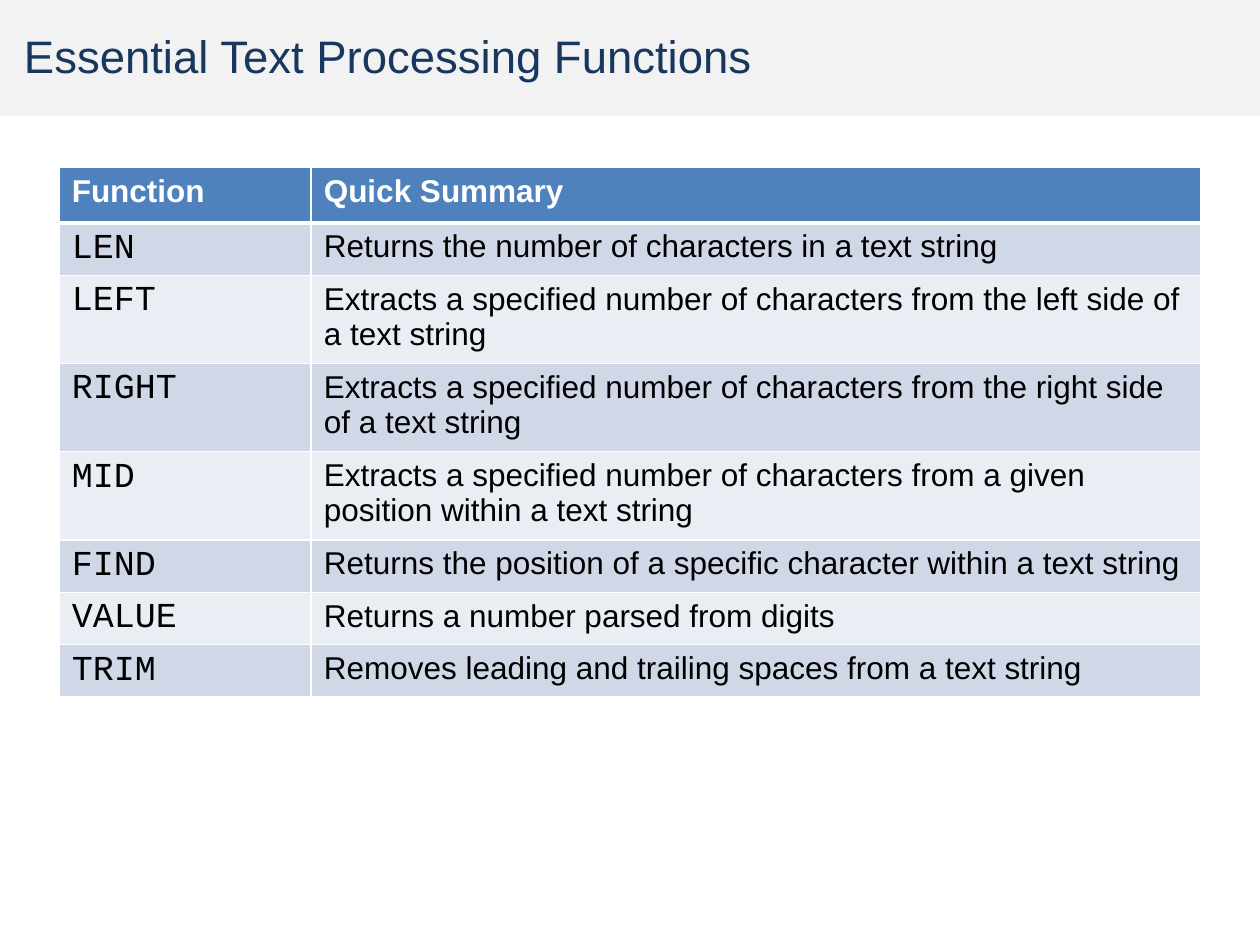
from dataclasses import dataclass

import pptx
import pptx.dml.color
import pptx.enum.shapes
import pptx.enum.text
import pptx.oxml
import pptx.oxml.ns
import pptx.util

Inches = pptx.util.Inches
RGBColor = pptx.dml.color.RGBColor

NAVY = RGBColor(0x17, 0x37, 0x5E)
PALE_GREY = RGBColor(0xF2, 0xF2, 0xF2)
HEADER_BLUE = RGBColor(0x4F, 0x81, 0xBD)
BAND_DARK = RGBColor(0xD0, 0xD8, 0xE8)
BAND_LIGHT = RGBColor(0xE9, 0xED, 0xF4)
WHITE = RGBColor(0xFF, 0xFF, 0xFF)
BLACK = RGBColor(0x00, 0x00, 0x00)


@dataclass
class TextStyle:
    name: str
    size: int
    color: RGBColor
    bold: bool = False


@dataclass
class FunctionRow:
    function: str
    summary: str
    height: float = 0.41


TITLE_STYLE = TextStyle("Arial", 26, NAVY)
HEADER_STYLE = TextStyle("Arial", 18, WHITE, True)
CODE_STYLE = TextStyle("Courier New", 20, BLACK)
SUMMARY_STYLE = TextStyle("Arial", 18, BLACK)

ROWS = [
    FunctionRow("Function", "Quick Summary", 0.44),
    FunctionRow("LEN", "Returns the number of characters in a text string"),
    FunctionRow("LEFT", "Extracts a specified number of characters from the left side of a text string", 0.7),
    FunctionRow("RIGHT", "Extracts a specified number of characters from the right side of a text string", 0.7),
    FunctionRow("MID", "Extracts a specified number of characters from a given position within a text string", 0.7),
    FunctionRow("FIND", "Returns the position of a specific character within a text string"),
    FunctionRow("VALUE", "Returns a number parsed from digits"),
    FunctionRow("TRIM", "Removes leading and trailing spaces from a text string"),
]
COLUMN_WIDTHS = (2, 7.06)


def write_text(frame, text: str, style: TextStyle) -> None:
    para = frame.paragraphs[0]
    para.alignment = pptx.enum.text.PP_ALIGN.LEFT
    span = para.add_run()
    span.text = text
    settings = {"name": style.name, "size": pptx.util.Pt(style.size), "bold": style.bold}
    for key, value in settings.items():
        setattr(span.font, key, value)
    span.font.color.rgb = style.color


def add_borders(cell, widths: dict[str, int]) -> None:
    properties = cell._tc.get_or_add_tcPr()
    for side, width in widths.items():
        properties.append(pptx.oxml.parse_xml(
            f'<a:ln{side} {pptx.oxml.ns.nsdecls("a")} w="{pptx.util.Pt(width)}">'
            f'<a:solidFill><a:srgbClr val="{WHITE}"/></a:solidFill></a:ln{side}>'))


def add_title(page, text: str) -> None:
    title = page.shapes.title
    places = {"left": 0.09, "top": 0.21, "width": 9.85, "height": 0.46}
    for key, value in places.items():
        setattr(title, key, Inches(value))
    title.text_frame.vertical_anchor = pptx.enum.text.MSO_ANCHOR.MIDDLE
    write_text(title.text_frame, text, TITLE_STYLE)

    # Grey band behind the title
    band = page.shapes.add_shape(
        pptx.enum.shapes.MSO_SHAPE.RECTANGLE, 0, 0, Inches(10), Inches(0.92))
    band.shadow.inherit = False
    band.fill.solid()
    band.fill.fore_color.rgb = PALE_GREY
    band.line.fill.background()
    title.element.addprevious(band.element)


def add_function_table(page, rows: list[FunctionRow]) -> None:
    table = page.shapes.add_table(
        len(rows), len(COLUMN_WIDTHS), Inches(0.47), Inches(1.33),
        Inches(sum(COLUMN_WIDTHS)), Inches(sum(row.height for row in rows))).table
    for column, width in zip(table.columns, COLUMN_WIDTHS):
        column.width = Inches(width)

    for index, row in enumerate(rows):
        table.rows[index].height = Inches(row.height)
        if index == 0:
            fill, styles = HEADER_BLUE, (HEADER_STYLE, HEADER_STYLE)
        else:
            fill = BAND_DARK if index % 2 else BAND_LIGHT
            styles = (CODE_STYLE, SUMMARY_STYLE)
        # A thick rule separates the header from the first function
        borders = {"L": 1, "R": 1, "T": 3 if index == 1 else 1, "B": 3 if index == 0 else 1}
        for cell, text, style in zip(table.rows[index].cells, (row.function, row.summary), styles):
            add_borders(cell, borders)
            cell.fill.solid()
            cell.fill.fore_color.rgb = fill
            write_text(cell.text_frame, text, style)


def main() -> None:
    deck = pptx.Presentation()
    deck.slide_width, deck.slide_height = Inches(10), Inches(7.5)
    page = deck.slides.add_slide(deck.slide_layouts[5])
    add_title(page, "Essential Text Processing Functions")
    add_function_table(page, ROWS)
    deck.save("out.pptx")


if __name__ == "__main__":
    main()
